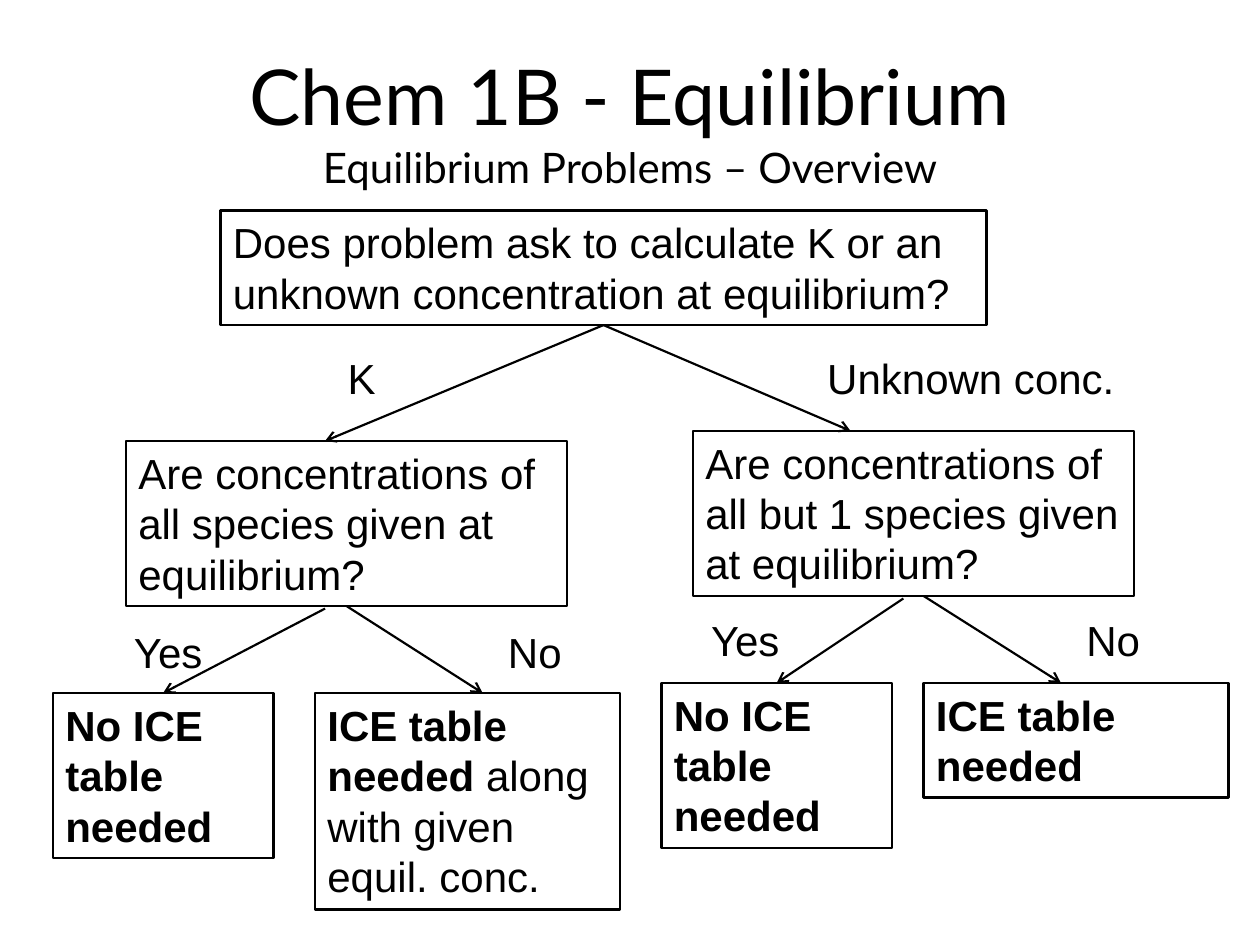
from dataclasses import dataclass
from typing import NamedTuple, Optional

import pptx
import pptx.dml.color
import pptx.enum.dml
import pptx.enum.shapes
import pptx.enum.text
import pptx.oxml.ns
import pptx.util
from lxml import etree

Inches = pptx.util.Inches
Align = pptx.enum.text.PP_ALIGN
Fit = pptx.enum.text.MSO_AUTO_SIZE
Anchor = pptx.enum.text.MSO_ANCHOR
BOTTOM, TOP = 2, 0


@dataclass(frozen=True)
class Theme:
    ink: pptx.dml.color.RGBColor = pptx.dml.color.RGBColor(0, 0, 0)
    paper: pptx.dml.color.RGBColor = pptx.dml.color.RGBColor(255, 255, 255)
    title_font: str = "Lato"
    body_font: str = "Arial"
    title_size: float = 44
    body_size: float = 24
    border: float = 1.5
    arrow: float = 1.25


THEME = Theme()


class Run(NamedTuple):
    text: str
    size: float = THEME.body_size
    bold: bool = False


class Step(NamedTuple):
    key: str
    left: float
    top: float
    width: float
    height: float
    runs: tuple


class Label(NamedTuple):
    text: str
    left: float
    top: float
    width: float


class Branch(NamedTuple):
    source: str
    target: str
    start: Optional[tuple] = None
    end: Optional[tuple] = None


STEPS = [
    Step("root", 1.75, 1.67, 6.08, 0.91,
         (Run("Does problem ask to calculate K or an unknown concentration at equilibrium?"),)),
    Step("k", 1, 3.5, 3.5, 1.31,
         (Run("Are concentrations of all species given at equilibrium?"),)),
    Step("k yes", 0.42, 5.5, 1.75, 1.31, (Run("No ICE table needed", bold=True),)),
    Step("k no", 2.5, 5.5, 2.42, 1.72,
         (Run("ICE table needed ", bold=True), Run("along with given equil. conc."))),
    Step("conc", 5.5, 3.42, 3.5, 1.31,
         (Run("Are concentrations of all but 1 species given at equilibrium?"),)),
    Step("conc yes", 5.25, 5.42, 1.83, 1.31, (Run("No ICE table needed", bold=True),)),
    Step("conc no", 7.33, 5.42, 2.42, 0.91, (Run("ICE table needed", bold=True),)),
]

LABELS = [
    Label("K", 2.58, 2.75, 0.58),
    Label("Unknown conc.", 6.08, 2.75, 3.25),
    Label("Yes", 0.92, 4.92, 0.83),
    Label("No", 3.83, 4.92, 0.83),
    Label("Yes", 5.5, 4.83, 0.83),
    Label("No", 8.42, 4.83, 0.83),
]

BRANCHES = [
    Branch("root", "k", end=(2.58, 3.5)),
    Branch("root", "conc", end=(6.75, 3.42)),
    Branch("k", "k yes", start=(2.58, 4.83)),
    Branch("k", "k no", end=(3.83, 5.5)),
    Branch("conc", "conc yes", start=(7.17, 4.75)),
    Branch("conc", "conc no", start=(7.33, 4.73), end=(8.42, 5.42)),
]


def write(shape, runs, *, font=THEME.body_font, align=Align.LEFT,
          anchor=Anchor.TOP, fit=Fit.SHAPE_TO_FIT_TEXT) -> None:
    frame = shape.text_frame
    frame.word_wrap = True
    frame.auto_size = fit
    frame.vertical_anchor = anchor
    paragraph = frame.paragraphs[0]
    paragraph.alignment = align
    for part in runs:
        if part.text == "\n":
            paragraph.add_line_break()
            continue
        run = paragraph.add_run()
        run.text = part.text
        run.font.name = font
        run.font.size = pptx.util.Pt(part.size)
        run.font.bold = part.bold
        run.font.color.rgb = THEME.ink


def add_title(slide) -> None:
    title = slide.shapes.title
    title.left, title.top = Inches(0.5), Inches(0.33)
    title.width, title.height = Inches(9), Inches(1.25)
    runs = (Run("Chem 1B - Equilibrium", THEME.title_size), Run("\n"),
            Run("Equilibrium Problems – Overview"))
    write(title, runs, font=THEME.title_font, align=Align.CENTER,
          anchor=Anchor.MIDDLE, fit=Fit.NONE)


def add_step(slide, step: Step):
    box = slide.shapes.add_shape(
        pptx.enum.shapes.MSO_SHAPE.RECTANGLE,
        Inches(step.left), Inches(step.top), Inches(step.width), Inches(step.height))
    box.shadow.inherit = False
    box.fill.background()
    box.line.color.rgb = THEME.ink
    box.line.width = pptx.util.Pt(THEME.border)
    write(box, step.runs)
    return box


def add_label(slide, label: Label) -> None:
    box = slide.shapes.add_textbox(
        Inches(label.left), Inches(label.top), Inches(label.width), Inches(0.51))
    write(box, (Run(label.text),), align=Align.CENTER)


def add_branch(slide, branch: Branch, boxes: dict) -> None:
    start = branch.start or (0, 0)
    end = branch.end or (0, 0)
    arrow = slide.shapes.add_connector(
        pptx.enum.shapes.MSO_CONNECTOR.STRAIGHT,
        Inches(start[0]), Inches(start[1]), Inches(end[0]), Inches(end[1]))
    if branch.start is None:
        arrow.begin_connect(boxes[branch.source], BOTTOM)
    if branch.end is None:
        arrow.end_connect(boxes[branch.target], TOP)
    arrow.line.color.rgb = THEME.ink
    arrow.line.width = pptx.util.Pt(THEME.arrow)
    qn = pptx.oxml.ns.qn
    properties = arrow.line._get_or_add_ln()
    etree.SubElement(properties, qn("a:tailEnd"), type="arrow")
    etree.SubElement(properties.getparent(), qn("a:effectLst"))


def main() -> None:
    deck = pptx.Presentation()
    deck.slide_width, deck.slide_height = Inches(10), Inches(7.5)
    slide = deck.slides.add_slide(deck.slide_layouts[5])
    slide.background.fill.solid()
    slide.background.fill.fore_color.rgb = THEME.paper
    add_title(slide)
    boxes = {step.key: add_step(slide, step) for step in STEPS}
    for branch in BRANCHES:
        add_branch(slide, branch, boxes)
    for label in LABELS:
        add_label(slide, label)
    deck.save("out.pptx")


if __name__ == "__main__":
    main()
